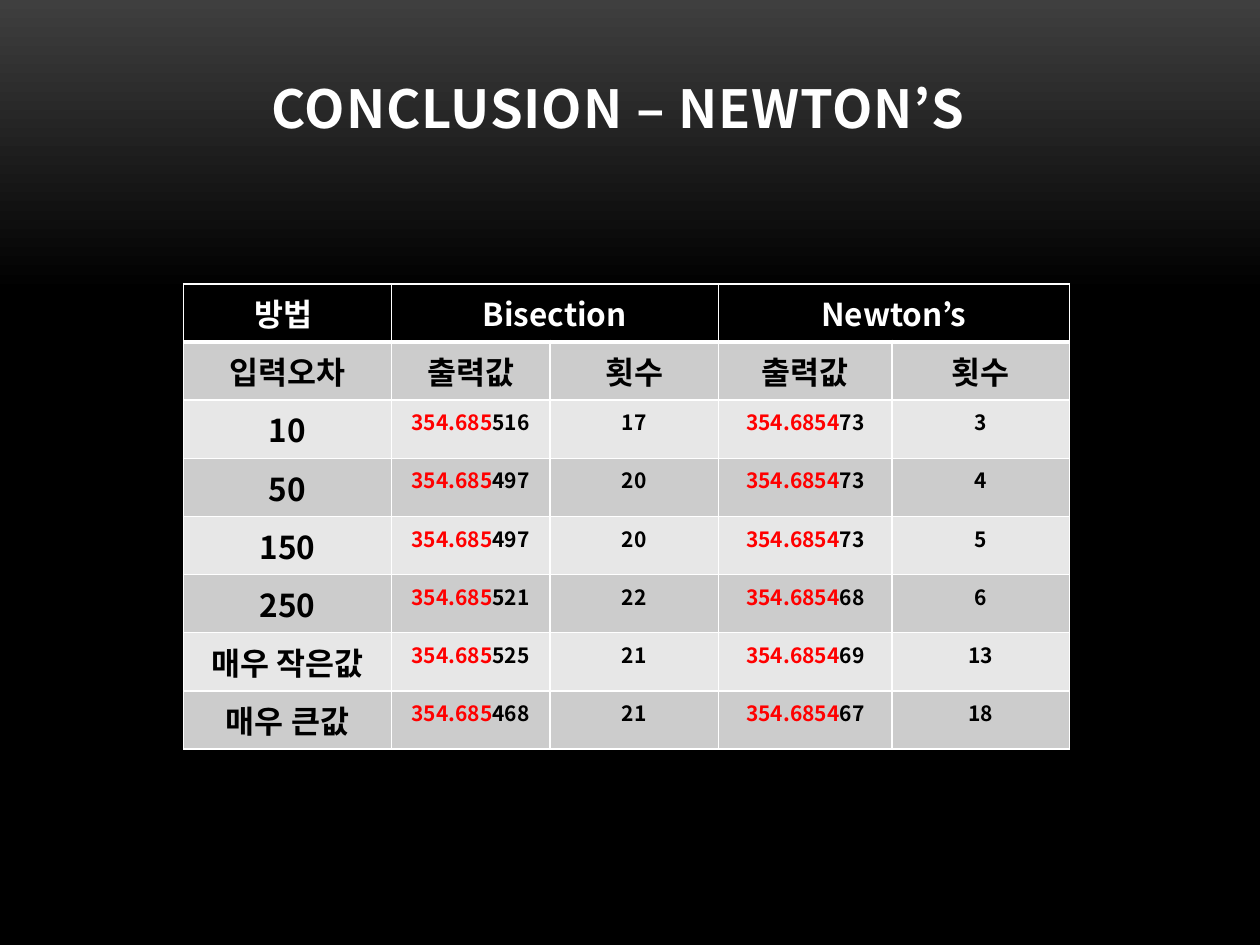
from dataclasses import dataclass

from lxml.etree import SubElement
from pptx import Presentation
from pptx.dml.color import RGBColor
from pptx.enum.text import MSO_ANCHOR, PP_ALIGN
from pptx.oxml.ns import qn
from pptx.slide import Slide
from pptx.table import _Cell
from pptx.text.text import _Paragraph, _Run
from pptx.util import Pt

FONT = "Noto Sans CJK KR"
WHITE, BLACK, RED = "FFFFFF", "000000", "FF0000"
DARK_BAND, LIGHT_BAND = "CCCCCC", "E7E7E7"
LABEL_SIZE, VALUE_SIZE = 18, 12
COLUMN_WIDTHS = (118.6, 90.7, 96.4, 99.2, 101.2)
ROW_HEIGHT = 33.25
METHODS = {0: "방법 ", 1: "Bisection", 3: "Newton’s"}
SUBHEADS = ("입력오차", "출력값", "횟수", "출력값", "횟수")
BISECTION_AGREED, NEWTON_AGREED = "354.685", "354.6854"


@dataclass
class Trial:
    tolerance: str
    bisection_rest: str
    bisection_count: str
    newton_rest: str
    newton_count: str


TRIALS = (
    Trial("10", "516", "17", "73", "3"),
    Trial("50", "497", "20", "73", "4"),
    Trial("150", "497", "20", "73", "5"),
    Trial("250", "521", "22", "68", "6"),
    Trial("매우 작은값", "525", "21", "69", "13"),
    Trial("매우 큰값", "468", "21", "67", "18"),
)


def rgb(value: str) -> RGBColor:
    return RGBColor.from_string(value)


def add_run(paragraph: _Paragraph, text: str, size: float, color: str) -> _Run:
    run = paragraph.add_run()
    run.text = text
    run.font.size = Pt(size)
    run.font.bold = True
    run.font.color.rgb = rgb(color)
    run.font.name = FONT
    SubElement(run.font._element, qn("a:ea"), typeface=FONT)
    return run


def style_cell(cell: _Cell, fill: str, top: float = 1, bottom: float = 1) -> None:
    """Set white borders of the given widths, then the fill."""
    properties = cell._tc.get_or_add_tcPr()
    for side, width in (("L", 1), ("R", 1), ("T", top), ("B", bottom)):
        line = SubElement(properties, qn(f"a:ln{side}"), w=str(Pt(width)))
        SubElement(SubElement(line, qn("a:solidFill")), qn("a:srgbClr"), val=WHITE)
    cell.fill.solid()
    cell.fill.fore_color.rgb = rgb(fill)


def write_cell(cell: _Cell, size: float, *parts: tuple[str, str]) -> None:
    """Write centred (text, colour) parts as runs."""
    paragraph = cell.text_frame.paragraphs[0]
    paragraph.alignment = PP_ALIGN.CENTER
    for text, color in parts:
        add_run(paragraph, text, size, color)


def paint_background(slide: Slide) -> None:
    fill = slide.background.fill
    fill.gradient()
    fill.gradient_angle = 270
    for stop, (position, color) in zip(fill.gradient_stops, ((0, "3F3F3F"), (0.31, BLACK))):
        stop.position = position
        stop.color.rgb = rgb(color)


def add_title(slide: Slide) -> None:
    frame = slide.shapes.add_textbox(Pt(65.5), Pt(3.6), Pt(576), Pt(79.2)).text_frame
    frame.word_wrap = True
    frame.vertical_anchor = MSO_ANCHOR.BOTTOM
    paragraph = frame.paragraphs[0]
    paragraph.alignment = PP_ALIGN.CENTER
    run = add_run(paragraph, "CONCLUSION – NEWTON’S", 30, WHITE)
    run.font._element.set("spc", "50")


def add_comparison(slide: Slide) -> None:
    row_count = len(TRIALS) + 2
    table = slide.shapes.add_table(
        row_count, len(COLUMN_WIDTHS), Pt(105), Pt(162.2),
        Pt(sum(COLUMN_WIDTHS)), Pt(ROW_HEIGHT * row_count),
    ).table
    for column, width in zip(table.columns, COLUMN_WIDTHS):
        column.width = Pt(width)

    for row_index, row in enumerate(table.rows):
        row.height = Pt(ROW_HEIGHT)
        band = DARK_BAND if row_index % 2 else LIGHT_BAND
        for cell in row.cells:
            style_cell(
                cell,
                band if row_index else BLACK,
                top=3 if row_index == 1 else 1,
                bottom=1 if row_index else 3,
            )

    for column_index, method in METHODS.items():
        header = table.cell(0, column_index)
        if column_index:
            header.merge(table.cell(0, column_index + 1))
        write_cell(header, LABEL_SIZE, (method, WHITE))
    for column_index, subhead in enumerate(SUBHEADS):
        write_cell(table.cell(1, column_index), LABEL_SIZE, (subhead, BLACK))

    for row_index, trial in enumerate(TRIALS, start=2):
        write_cell(table.cell(row_index, 0), LABEL_SIZE, (trial.tolerance, BLACK))
        results = (
            ((BISECTION_AGREED, RED), (trial.bisection_rest, BLACK)),
            ((trial.bisection_count, BLACK),),
            ((NEWTON_AGREED, RED), (trial.newton_rest, BLACK)),
            ((trial.newton_count, BLACK),),
        )
        for column_index, parts in enumerate(results, start=1):
            write_cell(table.cell(row_index, column_index), VALUE_SIZE, *parts)


def main() -> None:
    presentation = Presentation()
    presentation.slide_width, presentation.slide_height = Pt(720), Pt(540)
    slide = presentation.slides.add_slide(presentation.slide_layouts[6])
    paint_background(slide)
    add_title(slide)
    add_comparison(slide)
    presentation.save("out.pptx")


if __name__ == "__main__":
    main()
